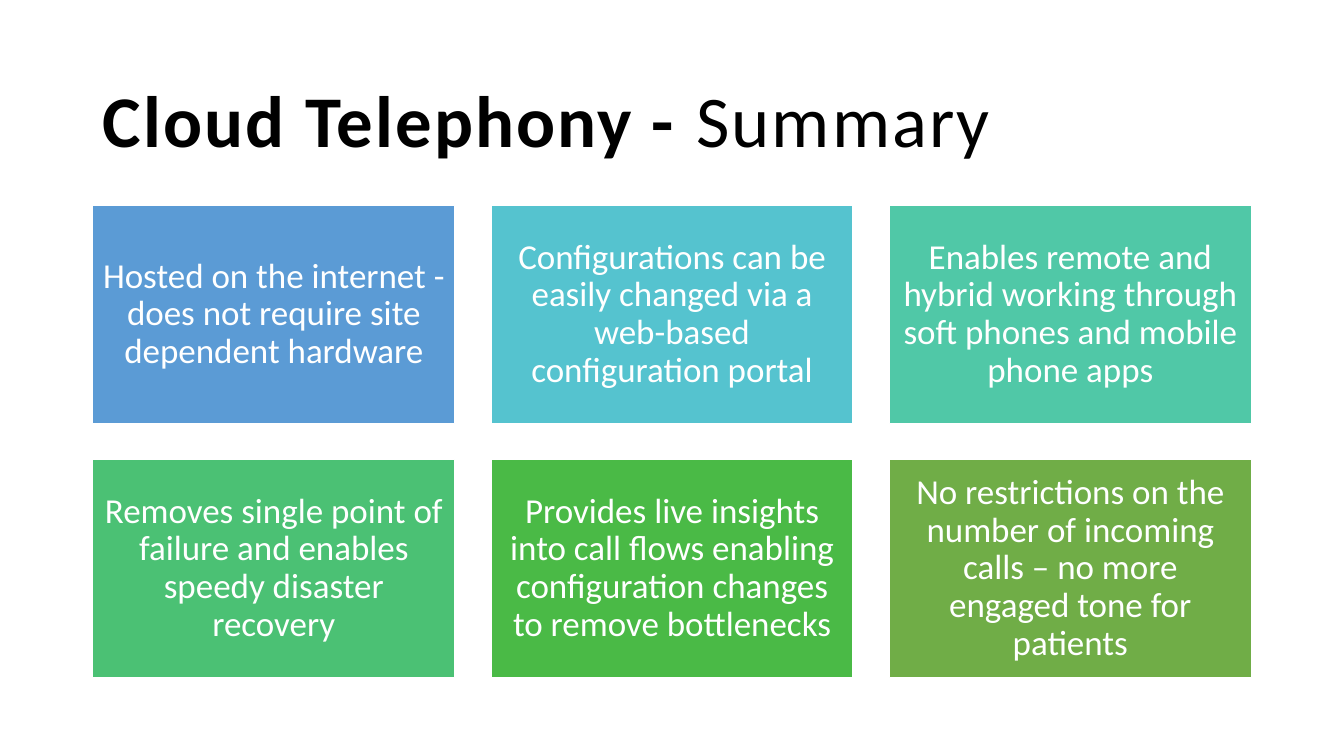
from dataclasses import dataclass

from pptx import Presentation
from pptx import util as u
from pptx.dml.color import RGBColor
from pptx.enum import shapes, text


@dataclass(frozen=True)
class Theme:
    font: str = "Calibri"
    title_size: float = 52
    card_size: float = 25
    title_color: str = "000000"
    card_text: str = "FFFFFF"
    card_line: str = "FFFFFF"
    card_fills: tuple = ("5B9BD5", "55C3CF", "50C8A7", "4BC174", "4ABA46", "70AD47")
    line_spacing: float = 0.9


LEFT = 0.92
TITLE_TOP, TITLE_WIDTH, TITLE_HEIGHT = 0.61, 11.5, 1.24
GRID_TOP, COLUMNS = 2.04, 3
CARD_WIDTH, CARD_HEIGHT = 3.59, 2.16
COLUMN_STEP, ROW_STEP = 3.95, 2.52

BENEFITS = [
    "Hosted on the internet - does not require site dependent hardware",
    "Configurations can be easily changed via a web-based configuration portal",
    "Enables remote and hybrid working through soft phones and mobile phone apps",
    "Removes single point of failure and enables speedy disaster recovery",
    "Provides live insights into call flows enabling configuration changes "
    "to remove bottlenecks",
    "No restrictions on the number of incoming calls – no more engaged tone "
    "for patients",
]


class SlideBuilder:
    def __init__(self, page, theme):
        self.page = page
        self.theme = theme

    def style_span(self, span, size, color, bold=False):
        span.font.name = self.theme.font
        span.font.size = u.Pt(size)
        span.font.bold = bold
        span.font.color.rgb = RGBColor.from_string(color)

    def set_frame(self, frame, alignment):
        """Wrap and centre the text vertically; return its first paragraph."""
        frame.word_wrap = True
        frame.auto_size = text.MSO_AUTO_SIZE.NONE
        frame.vertical_anchor = text.MSO_ANCHOR.MIDDLE
        para = frame.paragraphs[0]
        para.alignment = alignment
        para.line_spacing = self.theme.line_spacing
        return para

    def title(self, bold_part, plain_part):
        box = self.page.shapes.title
        box.left, box.top = u.Inches(LEFT), u.Inches(TITLE_TOP)
        box.width, box.height = u.Inches(TITLE_WIDTH), u.Inches(TITLE_HEIGHT)
        para = self.set_frame(box.text_frame, text.PP_ALIGN.LEFT)
        para.space_after = u.Pt(6)
        for words, bold in ((bold_part, True), (plain_part, False)):
            span = para.add_run()
            span.text = words
            self.style_span(span, self.theme.title_size, self.theme.title_color, bold)
            span.font._element.set("spc", "150")

    def card(self, left, top, words, fill):
        box = self.page.shapes.add_shape(
            shapes.MSO_SHAPE.RECTANGLE, u.Inches(left), u.Inches(top),
            u.Inches(CARD_WIDTH), u.Inches(CARD_HEIGHT))
        box.shadow.inherit = False
        box.fill.solid()
        box.fill.fore_color.rgb = RGBColor.from_string(fill)
        box.line.color.rgb = RGBColor.from_string(self.theme.card_line)
        box.line.width = u.Pt(1)
        frame = box.text_frame
        frame.text = words
        frame.margin_left = frame.margin_right = u.Inches(0.1)
        frame.margin_top = frame.margin_bottom = u.Inches(0.1)
        para = self.set_frame(frame, text.PP_ALIGN.CENTER)
        self.style_span(para.runs[0], self.theme.card_size, self.theme.card_text)


def main():
    deck = Presentation()
    deck.slide_width, deck.slide_height = u.Inches(13.33), u.Inches(7.5)
    title_only = deck.slide_layouts.get_by_name("Title Only")
    theme = Theme()
    builder = SlideBuilder(deck.slides.add_slide(title_only), theme)

    builder.title("Cloud Telephony - ", "Summary")
    for index, (words, fill) in enumerate(zip(BENEFITS, theme.card_fills)):
        row, column = divmod(index, COLUMNS)
        builder.card(LEFT + column * COLUMN_STEP, GRID_TOP + row * ROW_STEP, words, fill)

    deck.save("out.pptx")


if __name__ == "__main__":
    main()
